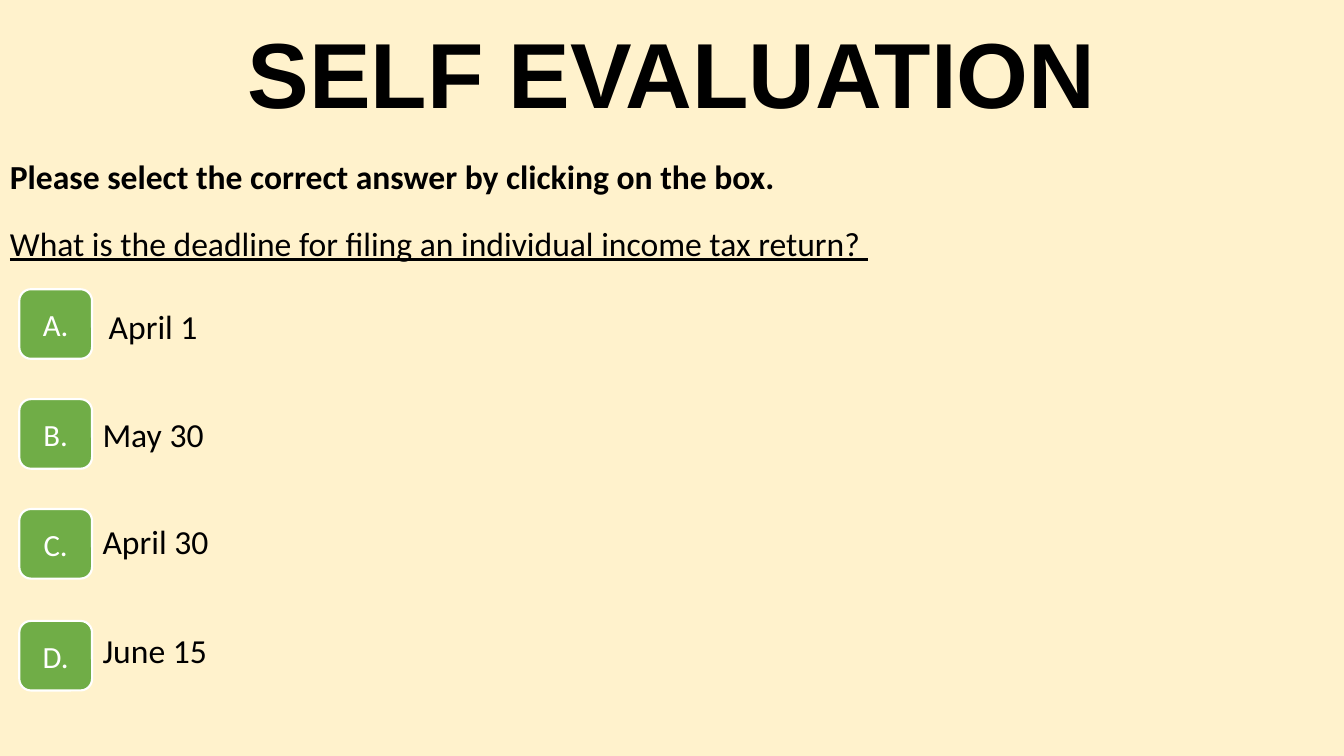
import pptx
import pptx.dml.color
import pptx.enum.shapes
import pptx.enum.text
import pptx.util

Pt = pptx.util.Pt
ALIGN = pptx.enum.text.PP_ALIGN
ANCHOR = pptx.enum.text.MSO_ANCHOR

ANSWERS = [
    ("A.", 206.6, "April 1", 70.6, 215.3),
    ("B.", 285.1, "May 30", 66.2, 292.3),
    ("C.", 363.6, "April 30", 66.2, 368.6),
    ("D.", 443.5, "June 15", 66.2, 446.4),
]


def color(value):
    return pptx.dml.color.RGBColor.from_string(value)


def write_text(shape, text, size=24, font="Calibri", fill="000000", bold=False,
               underline=False, align=ALIGN.LEFT, anchor=ANCHOR.TOP, spacing=1.0):
    frame = shape.text_frame
    frame.word_wrap = True
    frame.auto_size = pptx.enum.text.MSO_AUTO_SIZE.NONE
    frame.vertical_anchor = anchor
    paragraph = frame.paragraphs[0]
    paragraph.alignment = align
    paragraph.line_spacing = spacing
    run = paragraph.add_run()
    run.text = text
    run.font.name = font
    run.font.size = Pt(size)
    run.font.bold = bold
    run.font.underline = underline
    run.font.color.rgb = color(fill)


def add_title(slide, text):
    title = slide.shapes.title
    title.left, title.top, title.width, title.height = Pt(66), Pt(3.75), Pt(828), Pt(104.4)
    write_text(title, text, size=66, font="Arial", bold=True,
               align=ALIGN.CENTER, anchor=ANCHOR.MIDDLE, spacing=0.9)


def add_label(slide, text, left, top, width, **text_format):
    label = slide.shapes.add_textbox(Pt(left), Pt(top), Pt(width), Pt(36.35))
    write_text(label, text, **text_format)


def add_answer_button(slide, letter, top):
    button = slide.shapes.add_shape(pptx.enum.shapes.MSO_SHAPE.ROUNDED_RECTANGLE,
                                    Pt(13.8), Pt(top), Pt(52), Pt(49.7))
    button.shadow.inherit = False
    button.fill.solid()
    button.fill.fore_color.rgb = color("70AD47")
    button.line.color.rgb = color("FFFFFF")
    button.line.width = Pt(1.5)
    write_text(button, letter, size=22, fill="FFFFFF",
               align=ALIGN.CENTER, anchor=ANCHOR.MIDDLE)


def main():
    presentation = pptx.Presentation()
    presentation.slide_width = Pt(960)
    presentation.slide_height = Pt(540)
    slide = presentation.slides.add_slide(presentation.slide_layouts[5])
    slide.background.fill.solid()
    slide.background.fill.fore_color.rgb = color("FFF2CC")

    add_title(slide, "SELF EVALUATION")
    add_label(slide, "Please select the correct answer by clicking on the box.",
              0, 108, 700, bold=True)
    add_label(slide, "What is the deadline for filing an individual income tax return? ",
              0, 155.6, 884, underline=True)
    for letter, button_top, answer, left, top in ANSWERS:
        add_answer_button(slide, letter, button_top)
        add_label(slide, answer, left, top, 103)

    presentation.save("out.pptx")


if __name__ == "__main__":
    main()
